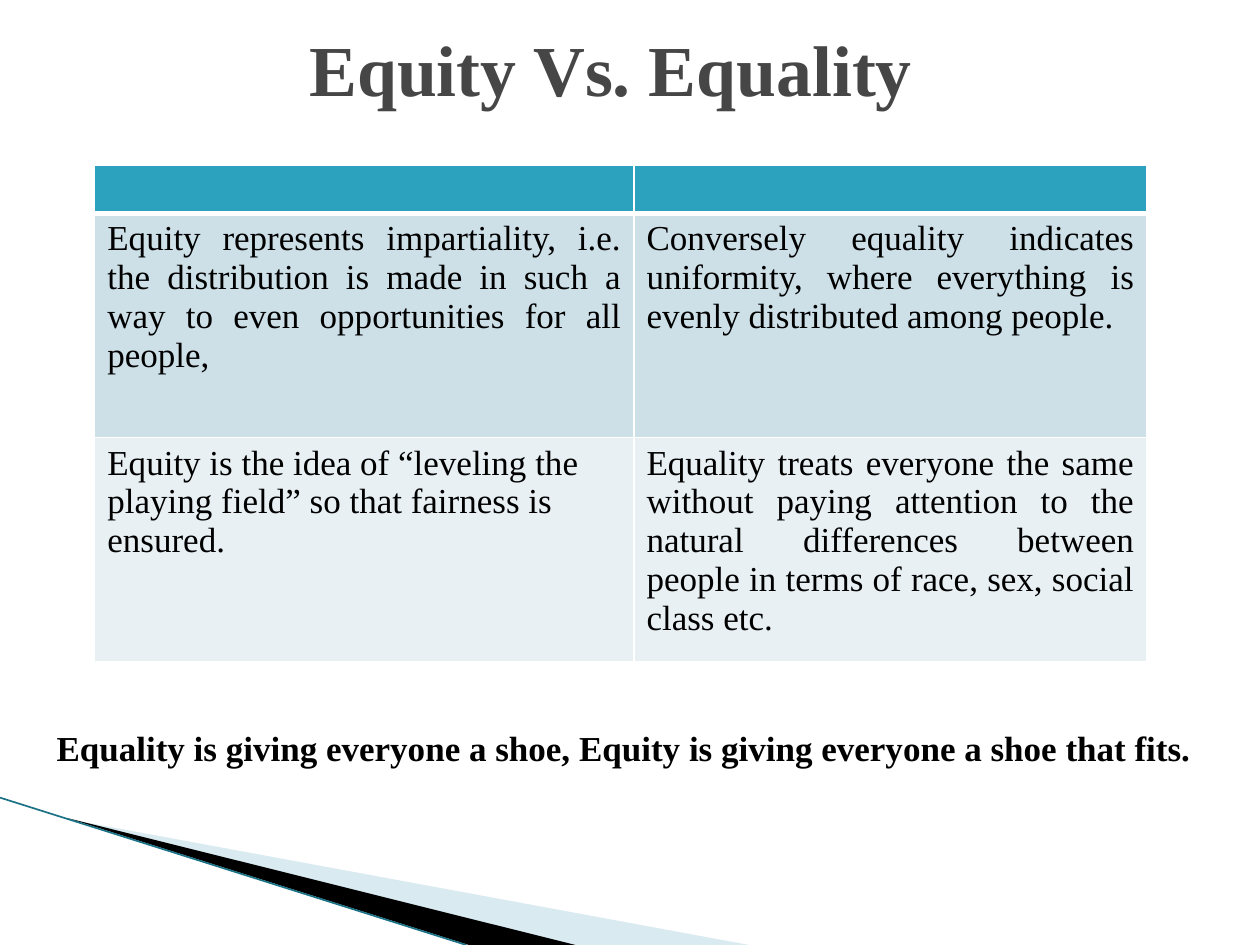
from lxml import etree
from pptx import Presentation
from pptx.dml.color import RGBColor
from pptx.enum.shapes import MSO_CONNECTOR
from pptx.enum.text import MSO_ANCHOR, MSO_AUTO_SIZE, PP_ALIGN
from pptx.oxml.ns import qn
from pptx.util import Cm, Pt

CENTER, JUSTIFY, LEFT = PP_ALIGN.CENTER, PP_ALIGN.JUSTIFY, PP_ALIGN.LEFT
MIDDLE = MSO_ANCHOR.MIDDLE
NO_AUTOFIT = MSO_AUTO_SIZE.NONE
STRAIGHT = MSO_CONNECTOR.STRAIGHT
TITLE_ONLY = 5

FONT = "Times New Roman"
BLACK, WHITE, GRAY = "000000", "FFFFFF", "464646"
HEADER, BAND_DARK, BAND_LIGHT = "2DA2BF", "CDE0E8", "E8F0F4"
PALE_BLUE, TEAL = "A0CBDC", "1B7286"

ROWS = [
    [
        ("Equity represents impartiality, i.e. the distribution is made in such a "
         "way to even opportunities for all people, ", JUSTIFY),
        ("Conversely equality indicates uniformity, where everything is evenly "
         "distributed among people.", JUSTIFY),
    ],
    [
        ("Equity is the idea of “leveling the playing field” so that fairness is "
         "ensured.", LEFT),
        ("Equality treats everyone the same without paying attention to the natural "
         "differences between people in terms of race, sex, social class etc. ", JUSTIFY),
    ],
]


def color(value):
    return RGBColor.from_string(value)


def fill_solid(fill, value):
    fill.solid()
    fill.fore_color.rgb = color(value)


class SlideBuilder:
    def __init__(self, slide):
        self.slide = slide

    def set_text(self, frame, text, size, text_color=BLACK, align=JUSTIFY, bold=False):
        paragraph = frame.paragraphs[0]
        paragraph.text = text
        paragraph.alignment = align
        font = paragraph.font
        font.name, font.size, font.bold = FONT, Pt(size), bold
        font.color.rgb = color(text_color)

    def title(self, text, left, top, width, height):
        shape = self.slide.shapes.title
        shape.left, shape.top = Cm(left), Cm(top)
        shape.width, shape.height = Cm(width), Cm(height)
        frame = shape.text_frame
        frame.auto_size = NO_AUTOFIT
        frame.vertical_anchor = MIDDLE
        self.set_text(frame, text, 41, GRAY, CENTER, True)

    def text(self, text, left, top, width, height):
        box = self.slide.shapes.add_textbox(Cm(left), Cm(top), Cm(width), Cm(height))
        box.text_frame.word_wrap = True
        self.set_text(box.text_frame, text, 20, bold=True)

    def wedge(self, points, fill, alpha=100):
        """Draw a filled polygon; alpha is its opacity in percent."""
        corners = [(Cm(x), Cm(y)) for x, y in points]
        builder = self.slide.shapes.build_freeform(*corners[0])
        builder.add_line_segments(corners[1:], close=True)
        shape = builder.convert_to_shape()
        shape.shadow.inherit = False
        shape.line.fill.background()
        fill_solid(shape.fill, fill)
        if alpha < 100:
            rgb = shape._element.spPr.find(".//" + qn("a:srgbClr"))
            etree.SubElement(rgb, qn("a:alpha"), val=str(alpha * 1000))

    def line(self, start, end, line_color, width):
        connector = self.slide.shapes.add_connector(
            STRAIGHT, *(Cm(value) for value in start + end))
        connector.line.color.rgb = color(line_color)
        connector.line.width = Pt(width)
        etree.SubElement(connector._element.spPr, qn("a:effectLst"))

    def cell_borders(self, cell, bottom):
        properties = cell._tc.get_or_add_tcPr()
        for side, width in (("L", 1), ("R", 1), ("T", 1), ("B", bottom)):
            border = etree.SubElement(properties, qn("a:ln" + side), w=str(Pt(width)))
            fill = etree.SubElement(border, qn("a:solidFill"))
            etree.SubElement(fill, qn("a:srgbClr"), val=WHITE)

    def table(self, left, top, widths, heights):
        table = self.slide.shapes.add_table(
            len(heights), len(widths), Cm(left), Cm(top),
            Cm(sum(widths)), Cm(sum(heights))).table
        for column, width in zip(table.columns, widths):
            column.width = Cm(width)
        for row, height in zip(table.rows, heights):
            row.height = Cm(height)
        for cell in table.rows[0].cells:
            cell.margin_top = cell.margin_bottom = 0
            self.cell_borders(cell, 3)
            fill_solid(cell.fill, HEADER)
        for index, (contents, band) in enumerate(zip(ROWS, (BAND_DARK, BAND_LIGHT)), 1):
            for cell, (text, align) in zip(table.rows[index].cells, contents):
                self.cell_borders(cell, 1)
                fill_solid(cell.fill, band)
                self.set_text(cell.text_frame, text, 20, align=align)


def main():
    presentation = Presentation()
    presentation.slide_width, presentation.slide_height = Cm(25.4), Cm(19.05)
    layout = presentation.slide_layouts[TITLE_ONLY]
    builder = SlideBuilder(presentation.slides.add_slide(layout))

    builder.wedge([(1.4, 16.52), (15.1, 19.05), (11.58, 19.05)], PALE_BLUE, 40)
    builder.wedge([(1.35, 16.49), (11.6, 19.05), (9.45, 19.05)], BLACK)
    builder.line((0, 16.08), (9.4, 19.05), TEAL, 0.95)
    builder.title("Equity Vs. Equality", 0.89, 0, 22.86, 2.72)
    builder.table(1.91, 3.33, widths=(10.87, 10.34), heights=(0.97, 4.52, 4.52))
    builder.text("Equality is giving everyone a shoe, Equity is giving everyone "
                 "a shoe that fits. ", 0.89, 14.53, 23.6, 1.12)
    presentation.save("out.pptx")


if __name__ == "__main__":
    main()
